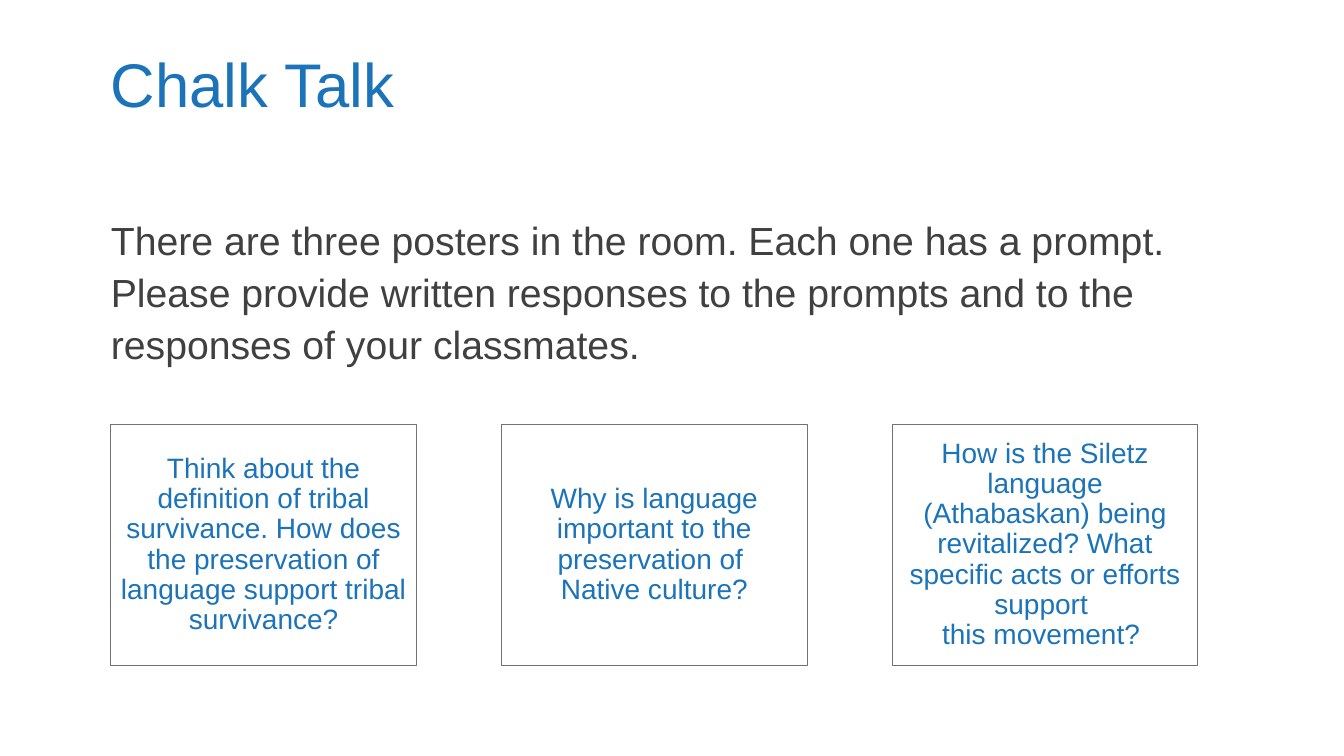
from dataclasses import dataclass

from pptx import Presentation
from pptx.dml.color import RGBColor
from pptx.enum.shapes import MSO_SHAPE as Shape
from pptx.enum.text import MSO_ANCHOR as Anchor, MSO_AUTO_SIZE as AutoSize, PP_ALIGN as Align
from pptx.util import Inches, Pt

TITLE = "Chalk Talk"
INSTRUCTIONS = (
    "There are three posters in the room. Each one has a prompt. "
    "Please provide written responses to the prompts and to the "
    "responses of your classmates."
)
# \v is a line break within a paragraph
PROMPTS = [
    "Think about the definition of tribal survivance. How does "
    "the preservation of language support tribal survivance?",
    "Why is language important to the preservation of \vNative culture?",
    "How is the Siletz language (Athabaskan) being revitalized? What "
    "specific acts or efforts support \vthis movement? ",
]


@dataclass(frozen=True)
class Theme:
    font: str = "Arial"
    blue: RGBColor = RGBColor(0x1B, 0x73, 0xB9)
    body: RGBColor = RGBColor(0x40, 0x40, 0x40)
    border: RGBColor = RGBColor(0x76, 0x71, 0x71)
    title_size: Pt = Pt(44)
    body_size: Pt = Pt(28)
    prompt_size: Pt = Pt(20)
    border_width: Pt = Pt(0.75)


THEME = Theme()
LEFT, CONTENT_WIDTH = 1.1, 10.78
POSTER_TOP, POSTER_WIDTH, POSTER_HEIGHT = 4.21, 3.03, 2.39


def write(shape, text, size, color, line_spacing, align=Align.LEFT,
          anchor=Anchor.TOP, margins=(0, 0), before=0, after=0):
    """Fill a shape with one paragraph; margins are (horizontal, vertical) inches."""
    frame = shape.text_frame
    frame.word_wrap = True
    frame.auto_size = AutoSize.NONE
    frame.vertical_anchor = anchor
    frame.margin_left = frame.margin_right = Inches(margins[0])
    frame.margin_top = frame.margin_bottom = Inches(margins[1])
    paragraph = frame.paragraphs[0]
    paragraph.text = text
    paragraph.alignment = align
    paragraph.line_spacing = line_spacing
    paragraph.space_before, paragraph.space_after = Pt(before), Pt(after)
    paragraph.font.name = THEME.font
    paragraph.font.size = size
    paragraph.font.color.rgb = color


def add_title(slide):
    title = slide.shapes.title
    title.left, title.top = Inches(LEFT), Inches(0.54)
    title.width, title.height = Inches(CONTENT_WIDTH), Inches(0.71)
    write(title, TITLE, THEME.title_size, THEME.blue, 0.9)


def add_instructions(slide):
    box = slide.shapes.add_textbox(Inches(LEFT), Inches(2.1), Inches(10.97), Inches(1.65))
    write(box, INSTRUCTIONS, THEME.body_size, THEME.body, 1.1, after=12)


def add_posters(slide):
    pitch = (CONTENT_WIDTH - POSTER_WIDTH) / (len(PROMPTS) - 1)
    for index, prompt in enumerate(PROMPTS):
        poster = slide.shapes.add_shape(
            Shape.RECTANGLE, Inches(LEFT + index * pitch), Inches(POSTER_TOP),
            Inches(POSTER_WIDTH), Inches(POSTER_HEIGHT))
        poster.shadow.inherit = False
        poster.fill.background()
        poster.line.color.rgb = THEME.border
        poster.line.width = THEME.border_width
        write(poster, prompt, THEME.prompt_size, THEME.blue, 0.9, Align.CENTER,
              Anchor.MIDDLE, margins=(0.1, 0.05), before=10)


def main():
    presentation = Presentation()
    presentation.slide_width, presentation.slide_height = Inches(13.33), Inches(7.5)
    slide = presentation.slides.add_slide(presentation.slide_layouts.get_by_name("Title Only"))
    add_title(slide)
    add_instructions(slide)
    add_posters(slide)
    presentation.save("out.pptx")


if __name__ == "__main__":
    main()
